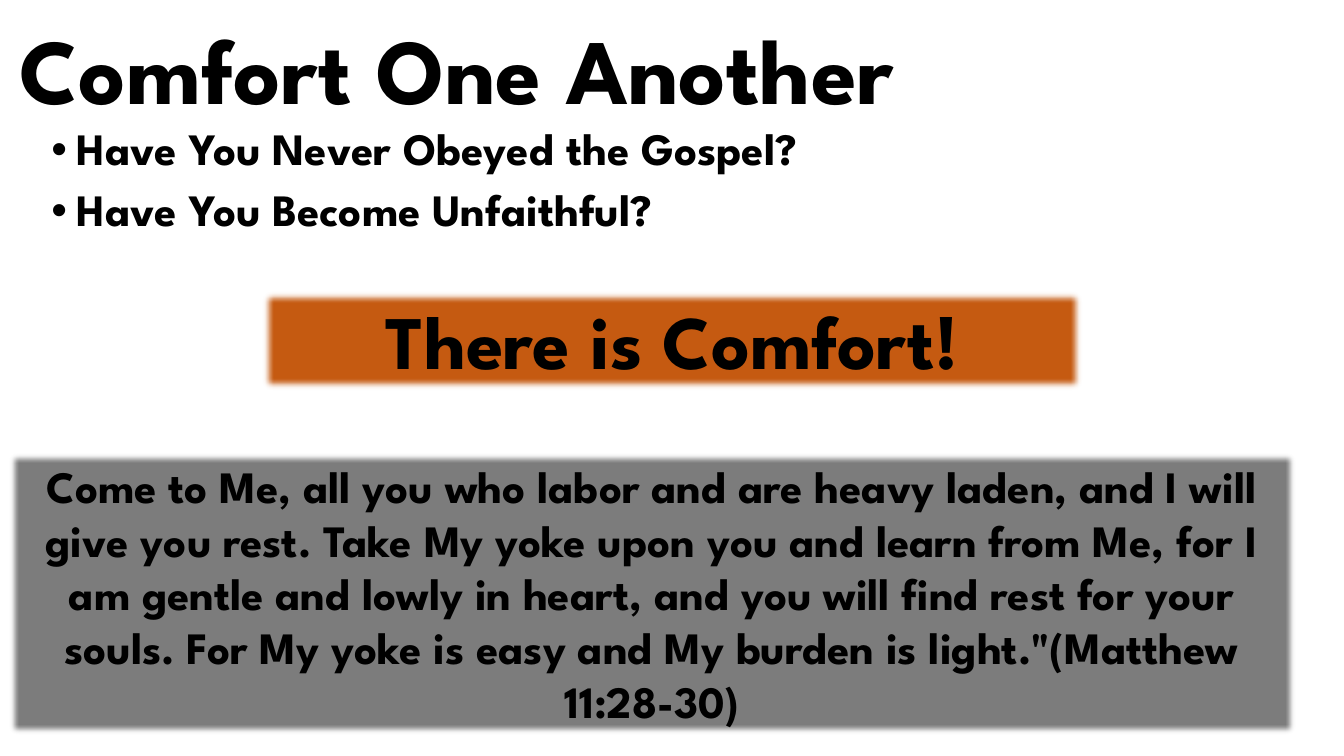
from lxml.etree import SubElement
from pptx import Presentation
from pptx.dml.color import RGBColor
from pptx.enum.shapes import MSO_SHAPE
from pptx.enum.text import MSO_ANCHOR, MSO_AUTO_SIZE, PP_ALIGN
from pptx.oxml.ns import qn
from pptx.util import Inches, Pt

# Content
HEADING = "Comfort One Another"
QUESTIONS = ["Have You Never Obeyed the Gospel?", "Have You Become Unfaithful?"]
ANSWER = "There is Comfort!"
VERSE = (
    "Come to Me, all you who labor and are heavy laden, and I will give you rest. "
    "Take My yoke upon you and learn from Me, for I am gentle and lowly in heart, "
    "and you will find rest for your souls. For My yoke is easy and My burden is "
    'light."(Matthew 11:28-30)'
)

# Theme
THEME = {
    "font": "League Spartan",
    "ink": RGBColor.from_string("000000"),
    "answer": RGBColor.from_string("C55A11"),
    "verse": RGBColor.from_string("7C7C7C"),
    "heading_size": 66,
    "answer_size": 54,
    "text_size": 32,
    "soft_edge": Pt(5),
}

# Layout in inches: left, top, width, height
SLIDE_WIDTH, SLIDE_HEIGHT = 13.33, 7.5
MARGIN, WIDE = 0.09, 12.76
ANSWER_WIDTH = 8.17
HEADING_BOX = (MARGIN, 0.12, 11.5, 1.1)
QUESTIONS_BOX = (0.41, 1.21, WIDE, 1.29)
ANSWER_BOX = ((SLIDE_WIDTH - ANSWER_WIDTH) / 2, 2.87, ANSWER_WIDTH, 1.01)
VERSE_BOX = (MARGIN, 4.5, WIDE, 2.79)


def place(part, box):
    for side, length in zip(("left", "top", "width", "height"), box):
        setattr(part, side, Inches(length))


def write(part, lines, size, anchor, align, bulleted=False):
    frame = part.text_frame
    frame.text = "\n".join(lines)
    for key, value in {
        "word_wrap": True,
        "auto_size": MSO_AUTO_SIZE.NONE,
        "vertical_anchor": anchor,
    }.items():
        setattr(frame, key, value)
    for index, line in enumerate(frame.paragraphs):
        line.alignment = align
        line.space_before = Pt(9 if index else 0)
        if bulleted:
            line.line_spacing = 0.9
            props = line._p.get_or_add_pPr()
            props.set("marL", str(Inches(0.25)))
            props.set("indent", str(-Inches(0.25)))
            SubElement(props, qn("a:buFont"), typeface="Arial")
            SubElement(props, qn("a:buChar"), char="•")
        font = line.runs[0].font
        for key, value in {"name": THEME["font"], "size": Pt(size), "bold": True}.items():
            setattr(font, key, value)
        font.color.rgb = THEME["ink"]


def add_panel(slide, box, fill, text, size):
    panel = slide.shapes.add_shape(MSO_SHAPE.RECTANGLE, *map(Inches, box))
    panel.fill.solid()
    panel.fill.fore_color.rgb = fill
    panel.line.fill.background()
    panel.shadow.inherit = False
    effects = panel._element.spPr.find(qn("a:effectLst"))
    SubElement(effects, qn("a:softEdge"), rad=str(THEME["soft_edge"]))
    write(panel, [text], size, MSO_ANCHOR.TOP, PP_ALIGN.CENTER)


def main():
    deck = Presentation()
    deck.slide_width, deck.slide_height = Inches(SLIDE_WIDTH), Inches(SLIDE_HEIGHT)
    slide = deck.slides.add_slide(deck.slide_layouts[1])

    # Heading and questions
    heading, questions = slide.placeholders
    place(heading, HEADING_BOX)
    write(heading, [HEADING], THEME["heading_size"], MSO_ANCHOR.MIDDLE, PP_ALIGN.LEFT)
    place(questions, QUESTIONS_BOX)
    write(questions, QUESTIONS, THEME["text_size"], MSO_ANCHOR.TOP, PP_ALIGN.LEFT, bulleted=True)

    # Answer and verse panels
    add_panel(slide, ANSWER_BOX, THEME["answer"], ANSWER, THEME["answer_size"])
    add_panel(slide, VERSE_BOX, THEME["verse"], VERSE, THEME["text_size"])

    deck.save("out.pptx")


if __name__ == "__main__":
    main()
